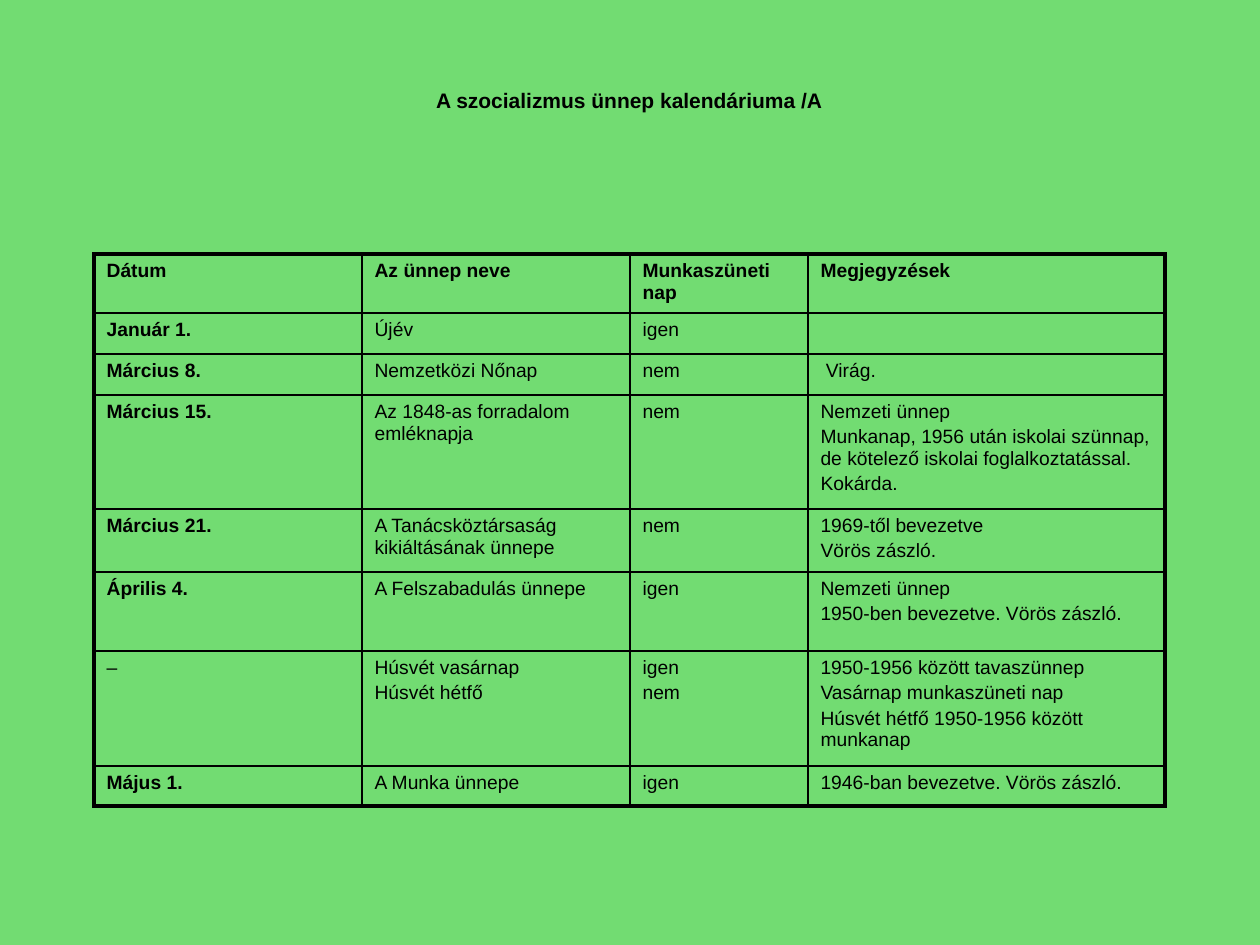
from dataclasses import dataclass

from lxml import etree
from pptx import Presentation
from pptx.dml.color import RGBColor
from pptx.enum.text import MSO_ANCHOR, PP_ALIGN
from pptx.oxml.ns import qn
from pptx.util import Emu, Pt

PX = 914400 // 126
CENTER = PP_ALIGN.CENTER
LEFT = PP_ALIGN.LEFT
MIDDLE = MSO_ANCHOR.MIDDLE
GREEN = "72DC72"
BLACK = "000000"
FONT = "Arial"
CELL_SIZE = 11
THICK, THIN = 2.25, 1
COL_WIDTHS = (268, 268, 178, 357)


@dataclass
class Holiday:
    height: int
    date: str
    name: str
    day_off: str
    notes: str


HEADER = Holiday(59, "Dátum", "Az ünnep neve", "Munkaszüneti nap", "Megjegyzések")
HOLIDAYS = [
    Holiday(41, "Január 1.", "Újév", "igen", ""),
    Holiday(41, "Március 8.", "Nemzetközi Nőnap", "nem", " Virág."),
    Holiday(114, "Március 15.", "Az 1848-as forradalom emléknapja", "nem",
            "Nemzeti ünnep\nMunkanap, 1956 után iskolai szünnap, "
            "de kötelező iskolai foglalkoztatással.\nKokárda."),
    Holiday(63, "Március 21.", "A Tanácsköztársaság kikiáltásának ünnepe", "nem",
            "1969-től bevezetve\nVörös zászló."),
    Holiday(79, "Április 4.", "A Felszabadulás ünnepe", "igen",
            "Nemzeti ünnep\n1950-ben bevezetve. Vörös zászló."),
    Holiday(115, "–", "Húsvét vasárnap\nHúsvét hétfő", "igen\nnem",
            "1950-1956 között tavaszünnep\nVasárnap munkaszüneti nap\n"
            "Húsvét hétfő 1950-1956 között munkanap"),
    Holiday(40, "Május 1.", "A Munka ünnepe", "igen",
            "1946-ban bevezetve. Vörös zászló."),
]


def px(n: int) -> Emu:
    return Emu(n * PX)


def color(value: str) -> RGBColor:
    return RGBColor.from_string(value)


def write(tf, text: str, *, size: float = CELL_SIZE, bold: bool = False,
          align=LEFT, gap: float = 2.2) -> None:
    for i, line in enumerate(text.split("\n")):
        p = tf.add_paragraph() if i else tf.paragraphs[0]
        p.alignment = align
        p.space_before = Pt(gap if i else 0)
        if not line:
            p._p.get_or_add_endParaRPr().set("sz", str(size * 100))
            continue
        r = p.add_run()
        r.text = line
        r.font.name = FONT
        r.font.size = Pt(size)
        r.font.bold = bold
        r.font.color.rgb = color(BLACK)


def set_borders(cell, **widths: float) -> None:
    tc_pr = cell._tc.get_or_add_tcPr()
    for side in "LRTB":
        ln = etree.SubElement(tc_pr, qn(f"a:ln{side}"), w=str(Pt(widths[side])))
        fill = etree.SubElement(ln, qn("a:solidFill"))
        etree.SubElement(fill, qn("a:srgbClr"), val=BLACK)


def add_title(s, text: str) -> None:
    box = s.shapes.add_textbox(px(94), px(32), px(1071), px(136))
    tf = box.text_frame
    tf.word_wrap = True
    tf.vertical_anchor = MIDDLE
    write(tf, text, size=12, bold=True, align=CENTER)


def add_calendar(s, rows: list[Holiday]) -> None:
    last_row, last_col = len(rows) - 1, len(COL_WIDTHS) - 1
    table = s.shapes.add_table(
        len(rows), len(COL_WIDTHS), px(94), px(254),
        px(sum(COL_WIDTHS)), px(sum(row.height for row in rows))).table
    table.first_row = False
    table.horz_banding = False
    for col, width in zip(table.columns, COL_WIDTHS):
        col.width = px(width)
    for i, row in enumerate(rows):
        table.rows[i].height = px(row.height)
        for j, text in enumerate((row.date, row.name, row.day_off, row.notes)):
            cell = table.cell(i, j)
            write(cell.text_frame, text,
                  bold=i == 0 or (j == 0 and text != "–"))
            set_borders(cell,
                        L=THIN if j else THICK,
                        R=THICK if j == last_col else THIN,
                        T=THIN if i else THICK,
                        B=THICK if i == last_row else THIN)
            cell.fill.background()


def main() -> None:
    prs = Presentation()
    prs.slide_width, prs.slide_height = px(1260), px(945)
    s = prs.slides.add_slide(prs.slide_layouts[6])
    s.background.fill.solid()
    s.background.fill.fore_color.rgb = color(GREEN)
    add_title(s, "A szocializmus ünnep kalendáriuma /A")
    add_calendar(s, [HEADER, *HOLIDAYS])
    prs.save("out.pptx")


if __name__ == "__main__":
    main()
